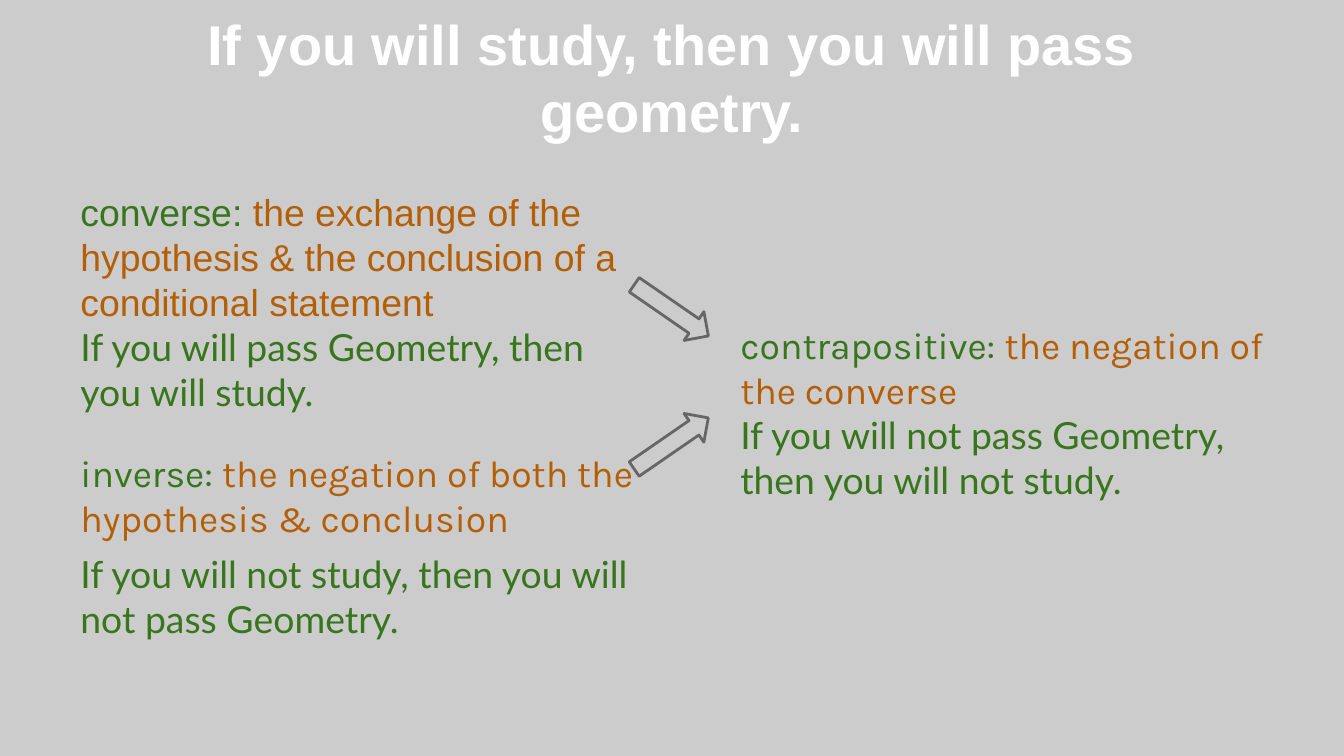
from pptx import Presentation
from pptx.dml.color import RGBColor
from pptx.enum.shapes import MSO_SHAPE
from pptx.enum.text import MSO_ANCHOR, PP_ALIGN
from pptx.util import Inches, Pt

WIDTH = 10
HEIGHT = WIDTH * 9 / 16
COLORS = {
    "background": "CCCCCC",
    "title": "FFFFFF",
    "term": "38761D",
    "meaning": "B45F06",
    "outline": "666666",
}
MARGIN = 0.05 * WIDTH
COLUMN = 4.37
RIGHT = 5.41
TILT = 34.6

# box, term, meaning, example, font of the definition, space before the example
STATEMENTS = [
    ((MARGIN, 1.31, COLUMN, 1.88), "converse: ",
     "the exchange of the hypothesis & the conclusion of a conditional statement",
     "If you will pass Geometry, then you will study.", "Arial", 0),
    ((RIGHT, 2.3, COLUMN, 1.76), "contrapositive: ",
     "the negation of the converse",
     "If you will not pass Geometry, then you will not study.", "Karla", 0),
    ((MARGIN, 3.25, COLUMN, 1.68), "inverse: ",
     "the negation of both the hypothesis & conclusion",
     "If you will not study, then you will not pass Geometry.", "Karla", 6),
]


def color(name):
    return RGBColor.from_string(COLORS[name])


def add_frame(slide, box):
    """Add a wrapping text box with even insets and return its text frame."""
    frame = slide.shapes.add_textbox(*map(Inches, box)).text_frame
    frame.word_wrap = True
    frame.margin_left = frame.margin_right = Inches(0.1)
    frame.margin_top = frame.margin_bottom = Inches(0.1)
    return frame


def add_title(slide, box, wording):
    frame = add_frame(slide, box)
    frame.vertical_anchor = MSO_ANCHOR.BOTTOM
    heading = frame.paragraphs[0]
    heading.text = wording
    heading.alignment = PP_ALIGN.CENTER
    heading.font.name = "Arial"
    heading.font.size = Pt(30)
    heading.font.bold = True
    heading.font.color.rgb = color("title")


def add_statement(slide, box, term, meaning, example, font, gap):
    """Add a coloured definition with its example sentence below."""
    frame = add_frame(slide, box)
    definition = frame.paragraphs[0]
    definition.font.name = font
    definition.font.size = Pt(20)
    for wording, role in ((term, "term"), (meaning, "meaning")):
        part = definition.add_run()
        part.text = wording
        part.font.color.rgb = color(role)

    sentence = frame.add_paragraph()
    sentence.text = example
    sentence.space_before = Pt(gap)
    sentence.font.name = "Lato"
    sentence.font.size = Pt(20)
    sentence.font.color.rgb = color("term")


def add_arrow(slide, box, angle):
    arrow = slide.shapes.add_shape(MSO_SHAPE.RIGHT_ARROW, *map(Inches, box))
    arrow.rotation = angle
    arrow.shadow.inherit = False
    arrow.fill.solid()
    arrow.fill.fore_color.rgb = color("background")
    arrow.line.color.rgb = color("outline")
    arrow.line.width = Pt(1.5)


def main():
    presentation = Presentation()
    presentation.slide_width = Inches(WIDTH)
    presentation.slide_height = Inches(HEIGHT)
    slide = presentation.slides.add_slide(presentation.slide_layouts[6])
    slide.background.fill.solid()
    slide.background.fill.fore_color.rgb = color("background")

    add_title(slide, (MARGIN, 0.23, WIDTH - 2 * MARGIN, 0.94),
              "If you will study, then you will pass geometry.")
    for statement in STATEMENTS:
        add_statement(slide, *statement)
    for top, angle in ((3.17, -TILT), (2.18, TILT)):
        add_arrow(slide, (4.66, top, 0.67, 0.26), angle)
    presentation.save("out.pptx")


if __name__ == "__main__":
    main()
